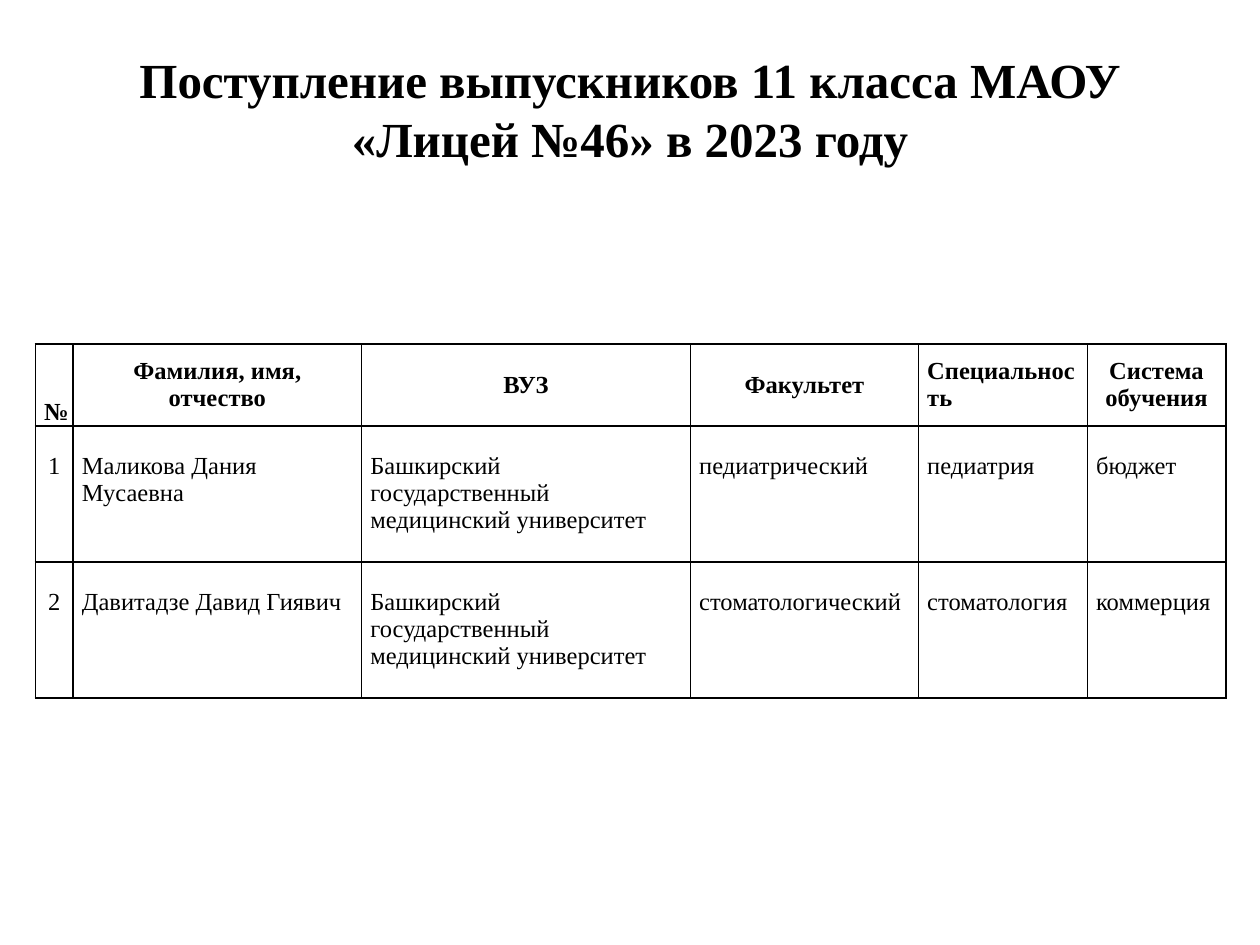
"""Builds the slide on where the 11th-grade leavers were admitted in 2023."""
from dataclasses import dataclass

from lxml.etree import SubElement
from pptx import Presentation
from pptx.dml.color import RGBColor
from pptx.enum.text import MSO_ANCHOR as Anchor, PP_ALIGN as Align
from pptx.oxml.ns import qn
from pptx.util import Inches, Pt


@dataclass(frozen=True)
class Theme:
    font: str = "Times New Roman"
    ink: str = "000000"
    title_size: int = 28
    table_size: int = 14
    border: int = 1
    side_margin: float = 0.07
    body_margin: float = 0.21


class SlideBuilder:
    def __init__(self, prs, theme):
        self.theme = theme
        self.width, self.height = prs.slide_width, prs.slide_height
        self.s = prs.slides.add_slide(prs.slide_layouts[6])

    def box(self, left, top, width, height):
        return (round(left * self.width), round(top * self.height),
                round(width * self.width), round(height * self.height))

    def add_lines(self, tf, lines, size, bold, align):
        tf.word_wrap = True
        for i, line in enumerate(lines):
            p = tf.add_paragraph() if i else tf.paragraphs[0]
            p.alignment = align
            r = p.add_run()
            r.text = line
            r.font.name, r.font.size, r.font.bold = self.theme.font, Pt(size), bold
            r.font.color.rgb = RGBColor.from_string(self.theme.ink)

    def title(self, text, *area):
        tf = self.s.shapes.add_textbox(*self.box(*area)).text_frame
        tf.vertical_anchor = Anchor.MIDDLE
        self.add_lines(tf, [text], self.theme.title_size, True, Align.CENTER)

    def outline(self, cell):
        pr = cell._tc.get_or_add_tcPr()
        for i, side in enumerate(("lnL", "lnR", "lnT", "lnB")):
            ln = SubElement(pr, qn(f"a:{side}"), w=str(Pt(self.theme.border)))
            fill = SubElement(ln, qn("a:solidFill"))
            SubElement(fill, qn("a:srgbClr"), val=self.theme.ink)
            pr.remove(ln)
            pr.insert(i, ln)

    def cell(self, cell, text, bold, align, anchor, top=0):
        cell.fill.background()
        cell.margin_left = cell.margin_right = Inches(self.theme.side_margin)
        cell.margin_top, cell.margin_bottom = Inches(top), 0
        cell.vertical_anchor = anchor
        self.add_lines(cell.text_frame, text.split("\n"),
                       self.theme.table_size, bold, align)
        self.outline(cell)

    def table(self, header, rows, header_aligns, body_aligns, widths, heights, left, top):
        area = self.box(left, top, sum(widths), sum(heights))
        table = self.s.shapes.add_table(len(heights), len(widths), *area).table
        table.horz_banding = table.first_row = False
        for column, share in zip(table.columns, widths):
            column.width = round(share * self.width)
        for row, share in zip(table.rows, heights):
            row.height = round(share * self.height)
        for c, text in enumerate(header):
            anchor = Anchor.MIDDLE if c else Anchor.BOTTOM
            self.cell(table.cell(0, c), text, True, header_aligns[c], anchor)
        for r, values in enumerate(rows, 1):
            for c, text in enumerate(values):
                self.cell(table.cell(r, c), text, False, body_aligns[c],
                          Anchor.TOP, self.theme.body_margin)


def main():
    prs = Presentation()
    prs.slide_width, prs.slide_height = Inches(10), Inches(7.5)
    slide = SlideBuilder(prs, Theme())
    slide.title("Поступление выпускников 11 класса МАОУ «Лицей №46» в 2023 году",
                0.05, 0.04, 0.9, 0.15)
    university = "Башкирский государственный медицинский университет"
    slide.table(
        header=["№", "Фамилия, имя, отчество", "ВУЗ", "Факультет",
                "Специальность", "Система\nобучения"],
        rows=[
            ["1", "Маликова Дания Мусаевна", university,
             "педиатрический", "педиатрия", "бюджет"],
            ["2", "Давитадзе Давид Гиявич", university,
             "стоматологический", "стоматология", "коммерция"],
        ],
        header_aligns=[Align.CENTER] * 4 + [Align.LEFT, Align.CENTER],
        body_aligns=[Align.CENTER] + [Align.LEFT] * 4 + [Align.JUSTIFY],
        widths=[width / 10 for width in (0.3, 2.29, 2.61, 1.81, 1.34, 1.1)],
        heights=[height / 7.5 for height in (0.65, 1.08, 1.08)],
        left=0.028, top=2.73 / 7.5)
    prs.save("out.pptx")


if __name__ == "__main__":
    main()
